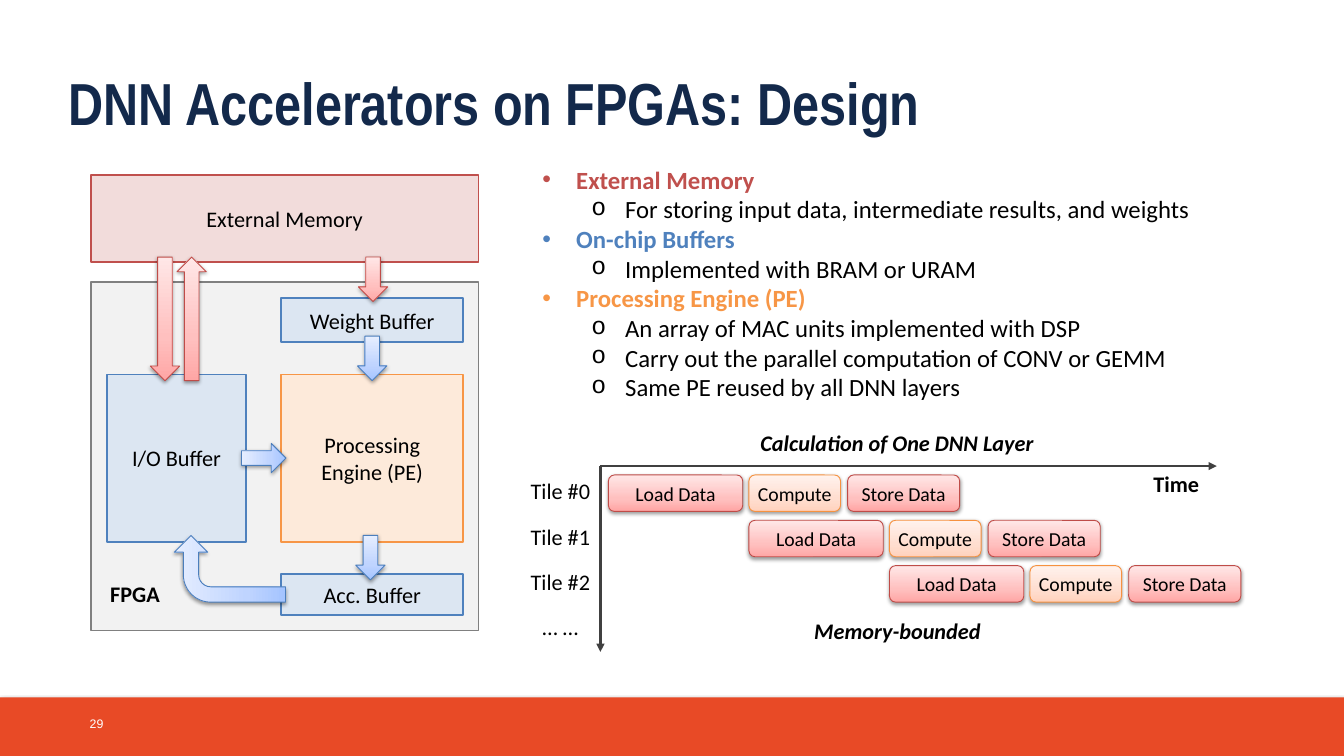
from copy import deepcopy
from lxml import etree
from pptx import Presentation
from pptx.dml.color import RGBColor
from pptx.enum.shapes import MSO_CONNECTOR, MSO_SHAPE
from pptx.enum.text import MSO_ANCHOR, MSO_AUTO_SIZE, PP_ALIGN
from pptx.oxml import parse_xml
from pptx.oxml.ns import nsdecls, qn
from pptx.util import Inches, Pt

RECT, ROUNDED = MSO_SHAPE.RECTANGLE, MSO_SHAPE.ROUNDED_RECTANGLE
DOWN, UP, BENT = MSO_SHAPE.DOWN_ARROW, MSO_SHAPE.UP_ARROW, MSO_SHAPE.BENT_ARROW
STRAIGHT = MSO_CONNECTOR.STRAIGHT
LEFT, CENTER = PP_ALIGN.LEFT, PP_ALIGN.CENTER
TOP, MIDDLE = MSO_ANCHOR.TOP, MSO_ANCHOR.MIDDLE
NO_FIT = MSO_AUTO_SIZE.NONE

BLACK = RGBColor(0x00, 0x00, 0x00)
WHITE = RGBColor(0xFF, 0xFF, 0xFF)
NAVY = RGBColor(0x13, 0x29, 0x4B)
FOOTER_ORANGE = RGBColor(0xE8, 0x4A, 0x26)
RED = RGBColor(0xC0, 0x50, 0x4D)
PALE_RED = RGBColor(0xF2, 0xDC, 0xDB)
BLUE = RGBColor(0x4F, 0x81, 0xBD)
PALE_BLUE = RGBColor(0xDC, 0xE6, 0xF2)
ORANGE = RGBColor(0xF7, 0x96, 0x46)
PALE_ORANGE = RGBColor(0xFD, 0xEA, 0xDA)
GRAY = RGBColor(0x80, 0x80, 0x80)
PALE_GRAY = RGBColor(0xF2, 0xF2, 0xF2)
AXIS_GRAY = RGBColor(0x40, 0x40, 0x40)
RED_EDGE = RGBColor(0xBF, 0x4C, 0x48)
BLUE_EDGE = RGBColor(0x4B, 0x7E, 0xBC)
ORANGE_EDGE = RGBColor(0xF6, 0x92, 0x40)
RED_FADE = (RGBColor(0xFF, 0xA6, 0xA5), RGBColor(0xFF, 0xC0, 0xBF), RGBColor(0xFF, 0xE7, 0xE7))
BLUE_FADE = (RGBColor(0xA4, 0xC4, 0xFF), RGBColor(0xBF, 0xD4, 0xFF), RGBColor(0xE6, 0xEE, 0xFF))
ORANGE_FADE = (RGBColor(0xFF, 0xD2, 0xBD), RGBColor(0xFF, 0xDE, 0xD0), RGBColor(0xFF, 0xF2, 0xED))

SHADOW = (
    f'<a:outerShdw {nsdecls("a")} blurRad="40000" dist="20000" dir="5400000" rotWithShape="0">'
    '<a:srgbClr val="000000"><a:alpha val="38000"/></a:srgbClr></a:outerShdw>'
)

deck = Presentation()
deck.slide_width, deck.slide_height = Inches(15.11), Inches(8.5)
page = deck.slides.add_slide(deck.slide_layouts[5])


def write(para, text, size=18, color=BLACK, bold=False, italic=False, font="Calibri", align=CENTER):
    para.alignment = align
    span = para.add_run()
    span.text = text
    span.font.name, span.font.size = font, Pt(size)
    span.font.bold, span.font.italic = bold, italic
    span.font.color.rgb = color


def add_block(kind, place, fill, edge=None, shadow=False):
    """Add a shape; a tuple of three colours as fill gives a vertical gradient."""
    block = page.shapes.add_shape(kind, *[Inches(length) for length in place])
    block.shadow.inherit = False
    if shadow:
        block._element.spPr.find(qn("a:effectLst")).append(parse_xml(SHADOW))
    if isinstance(fill, RGBColor):
        block.fill.solid()
        block.fill.fore_color.rgb = fill
        block.line.width = Pt(1.5)
    else:
        block.fill.gradient()
        block.fill.gradient_angle = 90
        stop_list = block._element.spPr.find(qn("a:gradFill")).find(qn("a:gsLst"))
        stop_list.insert(1, deepcopy(stop_list[0]))
        for stop, position, color in zip(block.fill.gradient_stops, (0, 0.35, 1), fill):
            stop.position = position
            stop.color.rgb = color
        block.line.width = Pt(0.75)
    if edge is None:
        block.line.fill.background()
    else:
        block.line.color.rgb = edge
    return block


# Title and footer
add_block(RECT, (0, 7.84, 15.11, 0.66), FOOTER_ORANGE, shadow=True)
title = page.shapes.title
title.left, title.top, title.width, title.height = Inches(0.67), Inches(0.69), Inches(13.81), Inches(0.79)
title.text_frame.auto_size = NO_FIT
title.text_frame.vertical_anchor = TOP
write(title.text_frame.paragraphs[0], "DNN Accelerators on FPGAs: Design", 48, NAVY, True,
      font="Arial Narrow", align=LEFT)

# Accelerator diagram
for place, fill, edge, lines in (
    ((1.02, 1.97, 4.36, 0.98), PALE_RED, RED, ["External Memory"]),
    ((1.02, 3.17, 4.36, 3.92), PALE_GRAY, GRAY, []),
    ((3.16, 4.21, 2.05, 1.88), PALE_ORANGE, ORANGE, ["Processing", "Engine (PE)"]),
    ((3.16, 3.35, 2.05, 0.5), PALE_BLUE, BLUE, ["Weight Buffer"]),
    ((3.16, 6.45, 2.05, 0.47), PALE_BLUE, BLUE, ["Acc. Buffer"]),
    ((1.2, 4.21, 1.57, 1.88), PALE_BLUE, BLUE, ["I/O Buffer"]),
):
    frame = add_block(RECT, place, fill, edge).text_frame
    for index, line in enumerate(lines):
        write(frame.add_paragraph() if index else frame.paragraphs[0], line)

for kind, place, rotation, fill, edge in (
    (DOWN, (4.02, 3.78, 0.33, 0.5), 0, BLUE_FADE, BLUE_EDGE),
    (DOWN, (4, 6.02, 0.33, 0.5), 0, BLUE_FADE, BLUE_EDGE),
    (DOWN, (2.8, 4.9, 0.33, 0.5), 270, BLUE_FADE, BLUE_EDGE),
    (BENT, (2.21, 5.77, 0.75, 1.25), 270, BLUE_FADE, BLUE_EDGE),
    (DOWN, (4.03, 2.89, 0.33, 0.5), 0, RED_FADE, RED_EDGE),
    (DOWN, (1.69, 2.89, 0.33, 1.39), 0, RED_FADE, RED_EDGE),
    (UP, (1.99, 2.89, 0.33, 1.39), 0, RED_FADE, RED_EDGE),
):
    arrow = add_block(kind, place, fill, edge, shadow=True)
    arrow.rotation = rotation
    if kind == BENT:
        for index, value in enumerate((0.23, 0.25, 0.25, 0.41)):
            arrow.adjustments[index] = value

# Timeline axes and tiles
for end_x, end_y in ((13.68, 5.24), (6.75, 7.33)):
    axis = page.shapes.add_connector(STRAIGHT, Inches(6.75), Inches(5.24), Inches(end_x), Inches(end_y))
    axis.line.color.rgb = AXIS_GRAY
    axis.line.width = Pt(2.25)
    etree.SubElement(axis.line._get_or_add_ln(), qn("a:tailEnd"), type="triangle")
    etree.SubElement(axis._element.spPr, qn("a:effectLst"))

for tile in range(3):
    for step, left, width, fill, edge in (
        ("Load Data", 6.84, 1.51, RED_FADE, RED_EDGE),
        ("Compute", 8.42, 1.03, ORANGE_FADE, ORANGE_EDGE),
        ("Store Data", 9.53, 1.26, RED_FADE, RED_EDGE),
    ):
        place = (left + 1.58 * tile, 5.34 + 0.51 * tile, width, 0.41)
        frame = add_block(ROUNDED, place, fill, edge, shadow=True).text_frame
        if step == "Compute":
            frame.margin_left = frame.margin_right = 0
        write(frame.paragraphs[0], step, 16)

# Labels
labels = [
    ("FPGA", (1.14, 6.48, 0.77, 0.4), {"bold": True, "align": LEFT}),
    ("Time", (12.77, 5.24, 0.91, 0.4), {"bold": True}),
    ("Memory-bounded", (8.67, 6.89, 2.84, 0.4), {"bold": True, "italic": True}),
    ("Calculation of One DNN Layer", (8.44, 4.78, 3.29, 0.4), {"bold": True, "italic": True}),
    ("29", (0.91, 7.91, 0.58, 0.45), {"size": 10, "color": WHITE, "font": "Arial", "align": LEFT}),
]
for row, text in enumerate(("Tile #0", "Tile #1", "Tile #2", "… …")):
    labels.append((text, (5.85, 5.32 + 0.51 * row, 0.9, 0.4), {}))
for text, place, style in labels:
    frame = page.shapes.add_textbox(*[Inches(length) for length in place]).text_frame
    frame.word_wrap = text != "FPGA"
    frame.vertical_anchor = MIDDLE if text == "29" else TOP
    write(frame.paragraphs[0], text, **style)

# Component notes
notes = page.shapes.add_textbox(Inches(6), Inches(1.8), Inches(8.18), Inches(2.79)).text_frame
notes.word_wrap = True
for index, (level, text, color) in enumerate((
    (0, "External Memory", RED),
    (1, "For storing input data, intermediate results, and weights", BLACK),
    (0, "On-chip Buffers", BLUE),
    (1, "Implemented with BRAM or URAM", BLACK),
    (0, "Processing Engine (PE)", ORANGE),
    (1, "An array of MAC units implemented with DSP", BLACK),
    (1, "Carry out the parallel computation of CONV or GEMM", BLACK),
    (1, "Same PE reused by all DNN layers", BLACK),
)):
    para = notes.add_paragraph() if index else notes.paragraphs[0]
    para.level = level
    properties = para._p.get_or_add_pPr()
    properties.set("marL", str(Inches((0.38, 0.93)[level])))
    properties.set("indent", str(Inches(-0.38)))
    etree.SubElement(properties, qn("a:buFont"), typeface=("Arial", "Courier New")[level])
    etree.SubElement(properties, qn("a:buChar"), char="•o"[level])
    write(para, text, 20, color, bold=level == 0, align=LEFT)

deck.save("out.pptx")
